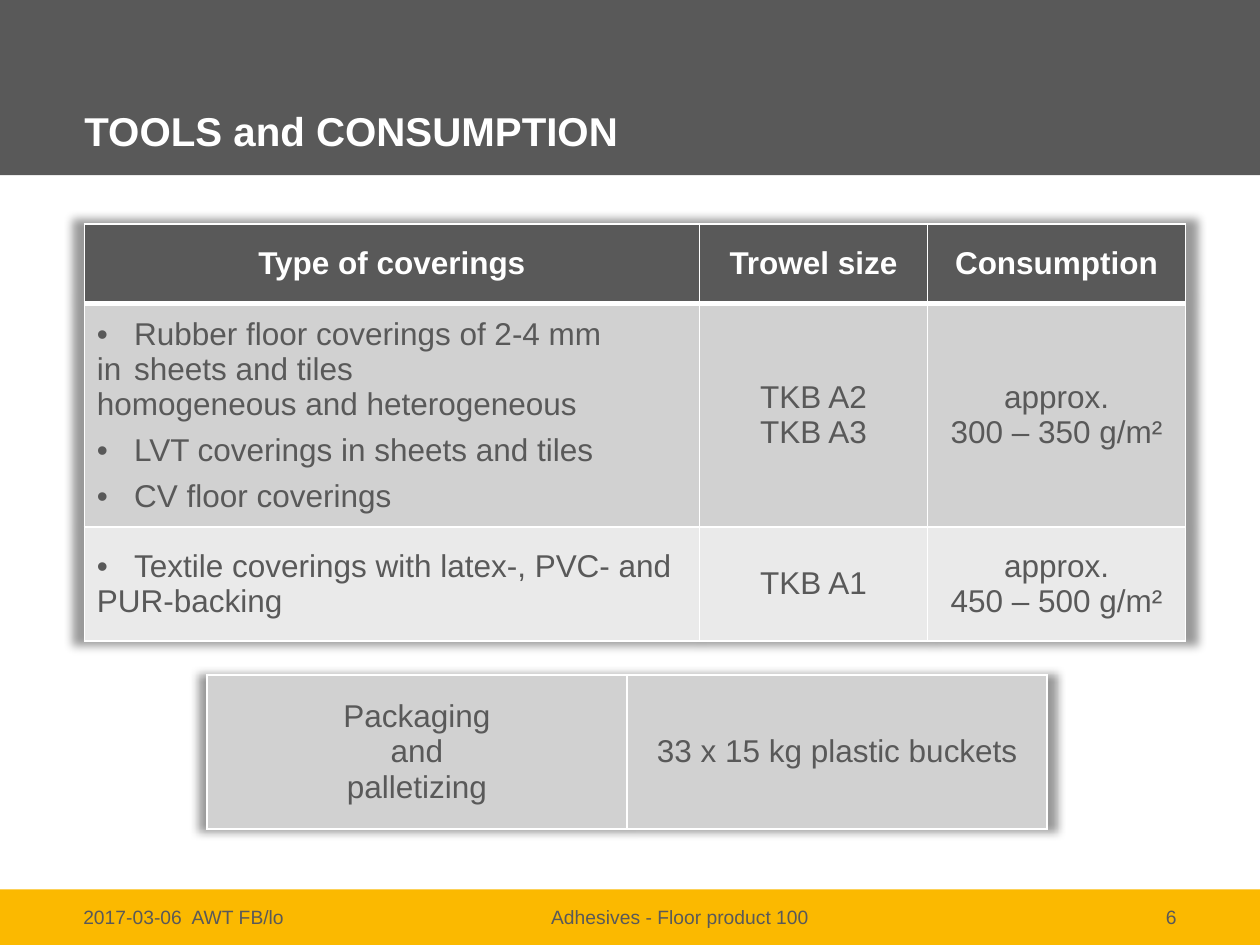
from lxml.etree import SubElement
from pptx import Presentation
from pptx.dml.color import RGBColor
from pptx.enum.shapes import MSO_SHAPE
from pptx.enum.text import MSO_ANCHOR, MSO_AUTO_SIZE, PP_ALIGN
from pptx.oxml import parse_xml
from pptx.oxml.ns import nsdecls, qn
from pptx.util import Cm, Pt

GREY = RGBColor(0x59, 0x59, 0x59)
YELLOW = RGBColor(0xFB, 0xB9, 0x00)
WHITE = RGBColor(0xFF, 0xFF, 0xFF)
MID_GREY = RGBColor(0xD1, 0xD1, 0xD1)
LIGHT_GREY = RGBColor(0xEA, 0xEA, 0xEA)

PAGE_WIDTH, PAGE_HEIGHT = 25.4, 19.05
FOOTER_TOP, FOOTER_HEIGHT = 17.93, 1.12

COVERINGS = [
    ["Type of coverings", "Trowel size", "Consumption"],
    [
        "\tRubber floor coverings of 2-4 mm\vin\tsheets and tiles\v"
        "homogeneous and heterogeneous\n"
        "\tLVT coverings in sheets and tiles\n"
        "\tCV floor coverings",
        "TKB A2\nTKB A3",
        "approx.\n300 – 350 g/m²",
    ],
    [
        "\tTextile coverings with latex-, PVC- and\vPUR-backing",
        "TKB A1",
        "approx.\n450 – 500 g/m²",
    ],
]
PACKAGING = [["Packaging\nand\npalletizing", "33 x 15 kg plastic buckets"]]


class SlideBuilder:
    """Holds the text style and the slide being filled."""

    def __init__(self, page, font_name="Arial"):
        self.page = page
        self.font_name = font_name

    def style(self, para, size, colour, bold=False, align=PP_ALIGN.LEFT):
        para.alignment = align
        for span in para.runs:
            span.font.name = self.font_name
            span.font.size = Pt(size)
            span.font.bold = bold
            span.font.color.rgb = colour

    def frame(self, box, anchor):
        """Remove the margins of a box and fix its size."""
        frame = box.text_frame
        frame.word_wrap = True
        frame.auto_size = MSO_AUTO_SIZE.NONE
        frame.vertical_anchor = anchor
        frame.margin_left = frame.margin_right = 0
        frame.margin_top = frame.margin_bottom = 0
        return frame

    def band(self, top, height, colour):
        band = self.page.shapes.add_shape(
            MSO_SHAPE.RECTANGLE, 0, Cm(top), Cm(PAGE_WIDTH), Cm(height))
        band.shadow.inherit = False
        band.fill.solid()
        band.fill.fore_color.rgb = colour
        band.line.fill.background()

    def title(self, text):
        title = self.page.shapes.title
        title.left, title.top = Cm(1.7), Cm(0)
        title.width, title.height = Cm(17), Cm(3.12)
        frame = self.frame(title, MSO_ANCHOR.BOTTOM)
        frame.text = text
        frame.paragraphs[0].line_spacing = Pt(24)
        self.style(frame.paragraphs[0], 23, WHITE, bold=True)

    def footer(self, text, left, width, align):
        box = self.page.shapes.add_textbox(
            Cm(left), Cm(FOOTER_TOP), Cm(width), Cm(FOOTER_HEIGHT))
        frame = self.frame(box, MSO_ANCHOR.MIDDLE)
        frame.text = text
        self.style(frame.paragraphs[0], 11, GREY, align=align)

    def bullet(self, para):
        """Put a bullet before the text, with wrapped lines flush left."""
        properties = para._p.get_or_add_pPr()
        properties.set("marL", "0")
        properties.set("indent", "0")
        font = SubElement(properties, qn("a:buFont"))
        font.set("typeface", self.font_name)
        SubElement(properties, qn("a:buChar")).set("char", "•")
        stops = SubElement(properties, qn("a:tabLst"))
        stop = SubElement(stops, qn("a:tab"))
        stop.set("pos", str(Cm(0.75)))
        stop.set("algn", "l")

    def borders(self, cell, top, bottom):
        properties = cell._tc.get_or_add_tcPr()
        for side, width in zip("LRTB", (1, 1, top, bottom)):
            properties.append(parse_xml(
                f'<a:ln{side} {nsdecls("a")} w="{Pt(width)}"><a:solidFill>'
                f'<a:srgbClr val="{WHITE}"/></a:solidFill></a:ln{side}>'))

    def glow_shadow(self, table):
        table._tbl.tblPr.insert(0, parse_xml(
            f'<a:effectLst {nsdecls("a")}><a:outerShdw blurRad="63500" '
            'sx="102000" sy="102000" algn="ctr" rotWithShape="0">'
            '<a:srgbClr val="000000"><a:alpha val="40000"/></a:srgbClr>'
            '</a:outerShdw></a:effectLst>'))

    def cell(self, cell, text, fill, header=False, below_header=False):
        self.borders(cell, 3 if below_header else 1, 3 if header else 1)
        cell.fill.solid()
        cell.fill.fore_color.rgb = fill
        cell.vertical_anchor = MSO_ANCHOR.MIDDLE
        cell.text_frame.text = text
        paragraphs = cell.text_frame.paragraphs
        bulleted = text.startswith("\t")
        for para in paragraphs:
            if bulleted:
                self.bullet(para)
                if len(paragraphs) > 1:
                    para.space_after = Pt(6)
            self.style(para, 18, WHITE if header else GREY, header,
                       PP_ALIGN.LEFT if bulleted else PP_ALIGN.CENTER)

    def table(self, rows, left, top, widths, heights, fills, has_header):
        table = self.page.shapes.add_table(
            len(heights), len(widths), Cm(left), Cm(top),
            Cm(sum(widths)), Cm(sum(heights))).table
        table.first_row = has_header
        table.horz_banding = False
        self.glow_shadow(table)
        for column, width in zip(table.columns, widths):
            column.width = Cm(width)
        for row, height in zip(table.rows, heights):
            row.height = Cm(height)
        for index, (texts, fill) in enumerate(zip(rows, fills)):
            for column, text in enumerate(texts):
                self.cell(table.cell(index, column), text, fill,
                          header=has_header and index == 0,
                          below_header=has_header and index == 1)


def main():
    deck = Presentation()
    deck.slide_width, deck.slide_height = Cm(PAGE_WIDTH), Cm(PAGE_HEIGHT)
    page = deck.slides.add_slide(deck.slide_layouts[5])
    builder = SlideBuilder(page)

    builder.band(0, 3.53, GREY)
    builder.band(FOOTER_TOP, FOOTER_HEIGHT, YELLOW)
    # The title has to lie in front of the bands.
    page.shapes._spTree.append(page.shapes.title._element)
    builder.title("TOOLS and CONSUMPTION")

    builder.footer("2017-03-06  AWT FB/lo", 1.68, 5.03, PP_ALIGN.LEFT)
    builder.footer("Adhesives - Floor product 100", 6.71, 14, PP_ALIGN.CENTER)
    builder.footer("6", 20.7, 3.02, PP_ALIGN.RIGHT)

    builder.table(COVERINGS, 1.7, 4.52, [12.4, 4.6, 5.2], [1.6, 4.5, 2.3],
                  [GREY, MID_GREY, LIGHT_GREY], has_header=True)
    builder.table(PACKAGING, 4.17, 13.61, [8.47, 8.47], [3.1],
                  [MID_GREY], has_header=False)

    deck.save("out.pptx")


if __name__ == "__main__":
    main()
